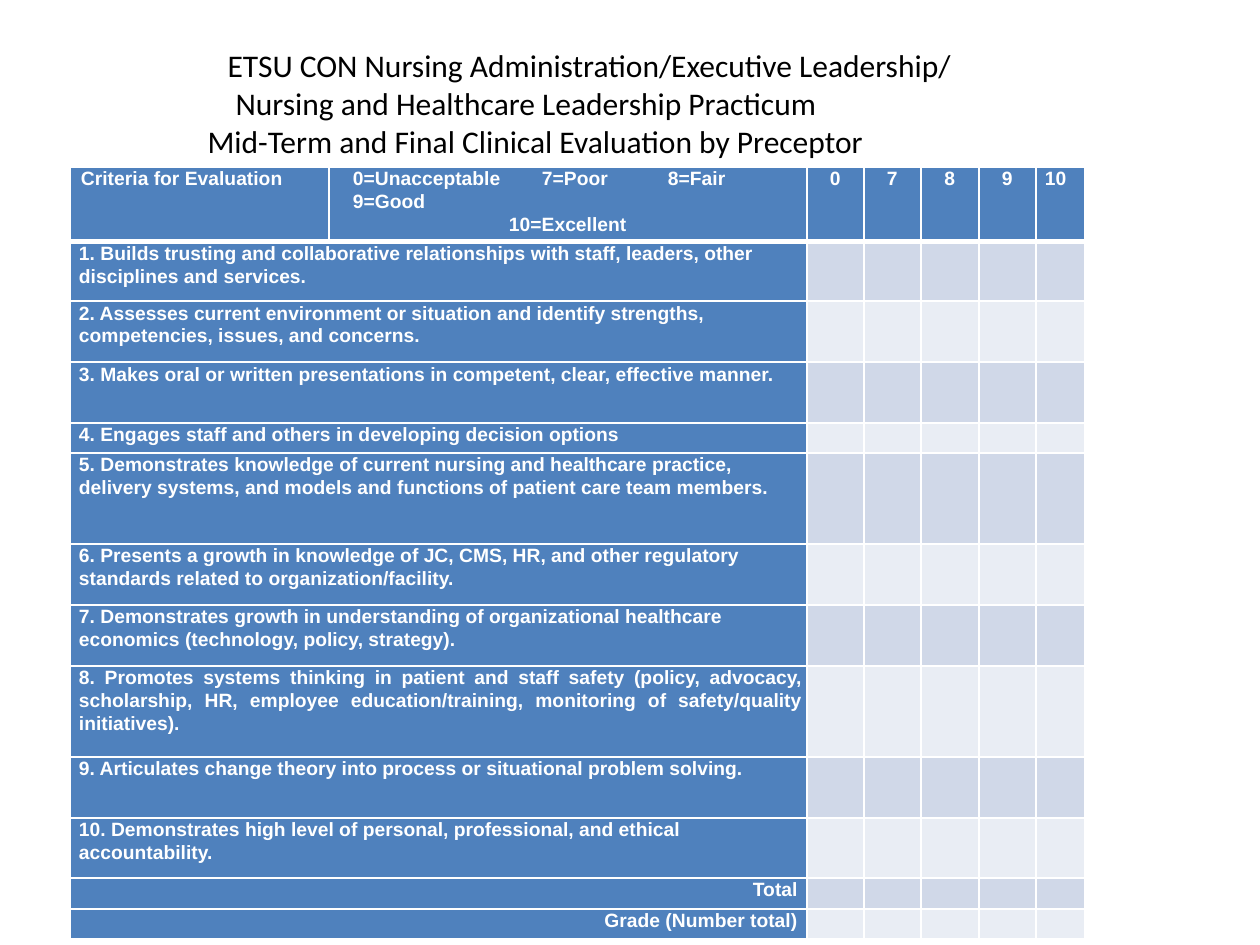
import pptx
import pptx.util
import pptx.dml.color
import pptx.enum.text
import pptx.oxml.ns
import lxml.etree
from itertools import accumulate

TITLE = [
    ("ETSU CON Nursing Administration/Executive Leadership/", 168),
    ("Nursing and Healthcare Leadership Practicum", 176),
    ("Mid-Term and Final Clinical Evaluation by Preceptor", 148),
]
HEADING = "Criteria for Evaluation"
SCALE = [("0=Unacceptable\t7=Poor\t8=Fair\t9=Good", 0), ("10=Excellent", 156)]
SCALE_TABS = [174, 267, 340]
SCORES = [("0 ", "center"), ("7 ", "center"), ("8 ", "center"), ("9 ", "center"), ("10", "left")]
CRITERIA = [
    ("1. Builds trusting and collaborative relationships with staff, leaders, other disciplines and services.", "left", 2),
    ("2. Assesses current environment or situation and identify strengths, competencies, issues, and concerns.", "left", 2),
    ("3. Makes oral or written presentations in competent, clear, effective manner.", "left", 2),
    ("4. Engages staff and others in developing decision options", "left", 1),
    ("5. Demonstrates knowledge of current nursing and healthcare practice, delivery systems, and models and functions of patient care team members.", "left", 3),
    ("6. Presents a growth in knowledge of JC, CMS, HR, and other regulatory standards related to organization/facility.", "left", 2),
    ("7. Demonstrates growth in understanding of organizational healthcare economics (technology, policy, strategy).", "left", 2),
    ("8. Promotes systems thinking in patient and staff safety (policy, advocacy, scholarship, HR, employee education/training, monitoring of safety/quality initiatives). ", "justify", 3),
    ("9. Articulates change theory into process or situational problem solving.", "left", 2),
    ("10. Demonstrates high level of personal, professional, and ethical accountability.", "left", 2),
    ("Total ", "right", 1),
    ("Grade (Number total) ", "right", 1),
]
HEADER_LINES = 2
TITLE_BOX = (47, 40, 1077, 127)
TABLE_LEFT, TABLE_TOP, TABLE_HEIGHT = 70, 167, 759
COLUMNS = [259, 478, 57, 57, 58, 57, 49]
COLORS = {"black": "000000", "white": "FFFFFF", "blue": "4F81BD", "odd": "D0D8E8", "even": "E9EDF4"}
ALIGN = {
    "left": pptx.enum.text.PP_ALIGN.LEFT,
    "center": pptx.enum.text.PP_ALIGN.CENTER,
    "right": pptx.enum.text.PP_ALIGN.RIGHT,
    "justify": pptx.enum.text.PP_ALIGN.JUSTIFY,
}


def px(value):
    return round(value * 914400 / 126)


def color(name):
    return pptx.dml.color.RGBColor.from_string(COLORS[name])


def add_child(parent, tag, **attributes):
    child = lxml.etree.SubElement(parent, pptx.oxml.ns.qn(tag))
    for key, value in attributes.items():
        child.set(key, str(value))
    return child


def add_span(para, text, font, size, ink, bold=False):
    span = para.add_run()
    span.text = text
    span.font.name = font
    span.font.size = pptx.util.Pt(size)
    span.font.bold = bold
    span.font.color.rgb = color(ink)


def indent(para, left):
    properties = para._p.get_or_add_pPr()
    properties.set("marL", str(px(left)))
    properties.set("indent", "0")
    return properties


def style_cell(cell, fill, bottom=1):
    cell.margin_left, cell.margin_right = px(9), px(4)
    cell.margin_top = cell.margin_bottom = 0
    properties = cell._tc.get_or_add_tcPr()
    for side, width in (("L", 1), ("R", 1), ("T", 1), ("B", bottom)):
        line = add_child(properties, "a:ln" + side, w=pptx.util.Pt(width))
        add_child(add_child(line, "a:solidFill"), "a:srgbClr", val=COLORS["white"])
    cell.fill.solid()
    cell.fill.fore_color.rgb = color(fill)


def write_cell(cell, lines, align="left", tabs=()):
    for number, (text, left) in enumerate(lines):
        para = cell.text_frame.add_paragraph() if number else cell.text_frame.paragraphs[0]
        para.alignment = ALIGN[align]
        para.line_spacing = 1.07
        properties = indent(para, left)
        if tabs:
            stops = add_child(properties, "a:tabLst")
            for stop in tabs:
                add_child(stops, "a:tab", pos=px(stop), algn="l")
        add_span(para, text, "Arial", 11, "white", True)


def add_title(page):
    box = page.shapes.title
    box.left, box.top, box.width, box.height = map(px, TITLE_BOX)
    frame = box.text_frame
    frame.word_wrap = True
    frame.auto_size = pptx.enum.text.MSO_AUTO_SIZE.SHAPE_TO_FIT_TEXT
    frame.vertical_anchor = pptx.enum.text.MSO_ANCHOR.TOP
    for number, (text, left) in enumerate(TITLE):
        para = frame.add_paragraph() if number else frame.paragraphs[0]
        para.alignment = ALIGN["left"]
        indent(para, left)
        add_span(para, text, "Calibri", 18, "black")


def add_evaluation(page):
    lines = [HEADER_LINES] + [count for _, _, count in CRITERIA]
    edges = [0] + [round(TABLE_HEIGHT * done / sum(lines)) for done in accumulate(lines)]
    frame = page.shapes.add_table(
        len(lines), len(COLUMNS), px(TABLE_LEFT), px(TABLE_TOP), px(sum(COLUMNS)), px(TABLE_HEIGHT)
    )
    table = frame.table
    table.first_row = table.horz_banding = False
    for column, width in zip(table.columns, COLUMNS):
        column.width = px(width)
    for row, top, bottom in zip(table.rows, edges, edges[1:]):
        row.height = px(bottom - top)

    for cell in table.rows[0].cells:
        style_cell(cell, "blue", 3)
    write_cell(table.cell(0, 0), [(HEADING, 2)])
    table.cell(0, 1).margin_left = px(24)
    write_cell(table.cell(0, 1), SCALE, tabs=SCALE_TABS)
    for column, (score, align) in enumerate(SCORES, 2):
        write_cell(table.cell(0, column), [(score, 0)], align)

    for row, (text, align, _) in enumerate(CRITERIA, 1):
        band = "odd" if row % 2 else "even"
        for column in range(len(COLUMNS)):
            cell = table.cell(row, column)
            style_cell(cell, "blue" if column < 2 else band)
            if column:
                add_child(cell.text_frame.paragraphs[0]._p, "a:endParaRPr", sz=1100)
        table.cell(row, 0).merge(table.cell(row, 1))
        write_cell(table.cell(row, 0), [(text, 0)], align)


def main():
    deck = pptx.Presentation()
    deck.slide_width, deck.slide_height = px(1260), px(945)
    page = deck.slides.add_slide(deck.slide_layouts[5])
    add_title(page)
    add_evaluation(page)
    deck.save("out.pptx")


if __name__ == "__main__":
    main()
